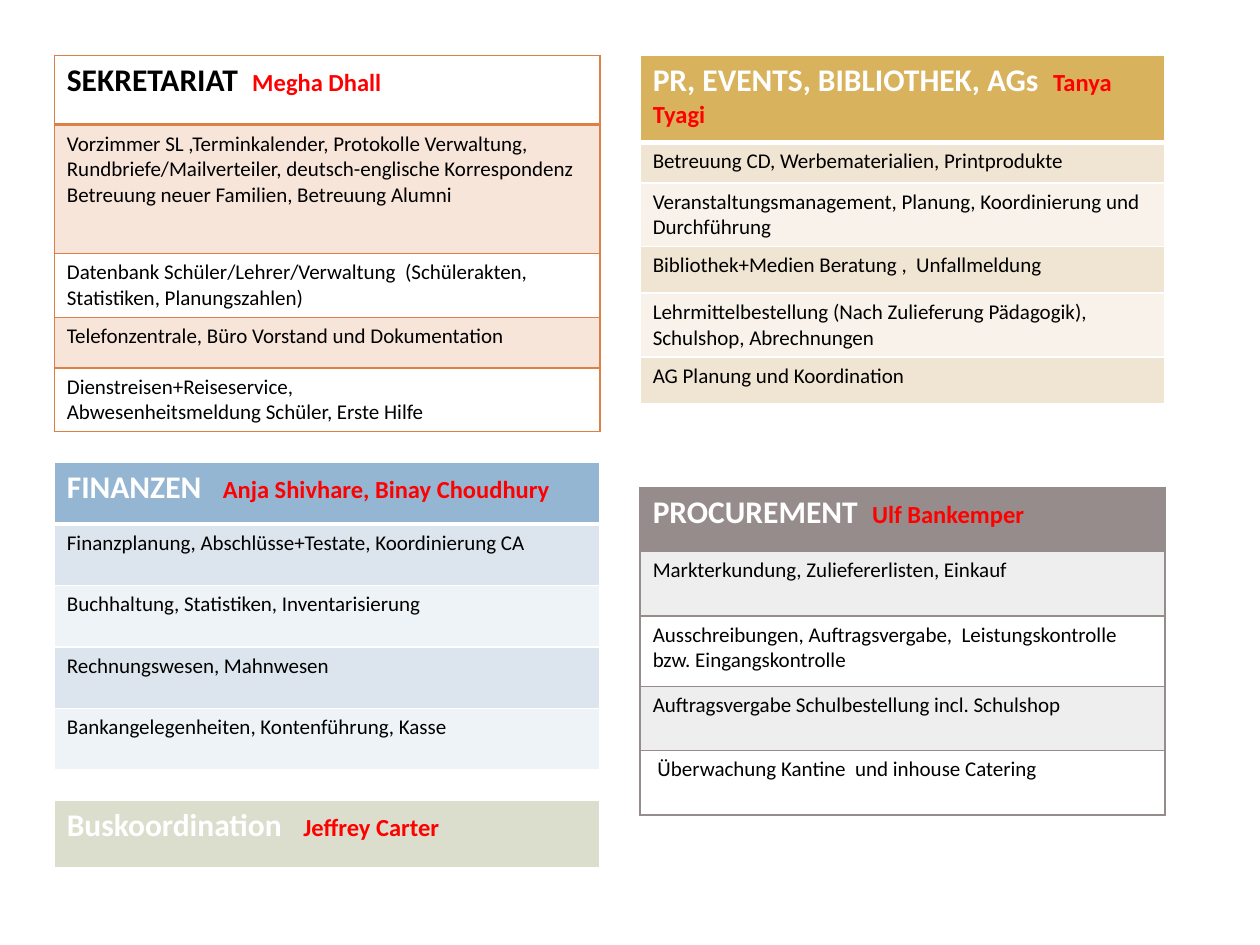
from pptx import Presentation
from pptx.dml.color import RGBColor
from pptx.oxml.ns import qn
from pptx.util import Pt
from lxml import etree

FONT = "Calibri"
WHITE = RGBColor(0xFF, 0xFF, 0xFF)
BLACK = RGBColor(0, 0, 0)
RED = RGBColor(0xFF, 0, 0)
ORANGE = RGBColor(0xDD, 0x80, 0x47)
GOLD = RGBColor(0xD8, 0xB2, 0x5C)
GOLD_BANDS = (RGBColor(0xF0, 0xE4, 0xD2), RGBColor(0xF8, 0xF2, 0xEA))
BLUE = RGBColor(0x94, 0xB6, 0xD2)
BLUE_BANDS = (RGBColor(0xDC, 0xE5, 0xEE), RGBColor(0xEE, 0xF3, 0xF7))
GREY = RGBColor(0x96, 0x8C, 0x8C)
GREY_BANDS = (RGBColor(0xEF, 0xEE, 0xEE), WHITE)
SAGE = RGBColor(0xDB, 0xDD, 0xCD)

LEFT_COL = (31, 312)    # left, width
RIGHT_COL = (365.8, 300)
TOP = 31.8


def set_borders(cell, color, top, bottom):
    """Draw the four cell borders; left and right are 1 pt."""
    tcPr = cell._tc.get_or_add_tcPr()
    for side, width in (("L", 1), ("R", 1), ("T", top), ("B", bottom)):
        ln = etree.SubElement(tcPr, qn("a:ln" + side), w=str(Pt(width)))
        fill = etree.SubElement(ln, qn("a:solidFill"))
        etree.SubElement(fill, qn("a:srgbClr"), val=str(color))


def set_fill(cell, color, alpha=None):
    """Fill a cell; a color of None leaves it open."""
    if color is None:
        cell.fill.background()
        return
    cell.fill.solid()
    cell.fill.fore_color.rgb = color
    if alpha:
        clr = cell._tc.tcPr.find(qn("a:solidFill"))[0]
        etree.SubElement(clr, qn("a:alpha"), val=str(alpha * 1000))


def add_run(p, text, size, color, bold=False):
    r = p.add_run()
    r.text = text
    r.font.name = FONT
    r.font.size = Pt(size)
    r.font.bold = bold
    r.font.color.rgb = color


def add_department(s, column, top, heights, title, person, tasks, header,
                   bands=(), line=WHITE, rule=3, title_color=WHITE, alpha=None):
    """Add one department: a header row, then one banded row per task."""
    left, width = column
    table = s.shapes.add_table(len(heights), 1, Pt(left), Pt(top),
                               Pt(width), Pt(sum(heights))).table
    table.horz_banding = False
    for row, height in zip(table.rows, heights):
        row.height = Pt(height)

    # Header with department and person in charge
    cell = table.cell(0, 0)
    set_borders(cell, line, 1, rule)
    set_fill(cell, header)
    p = cell.text_frame.paragraphs[0]
    add_run(p, title, 18, title_color, True)
    add_run(p, person, 14, RED, True)

    # Tasks
    for i, task in enumerate(tasks, 1):
        cell = table.cell(i, 0)
        set_borders(cell, line, rule if i == 1 else 1, 1)
        set_fill(cell, bands[(i - 1) % 2], alpha)
        tf = cell.text_frame
        for n, text in enumerate(task.split("\n")):
            p = tf.add_paragraph() if n else tf.paragraphs[0]
            add_run(p, text, 12, BLACK)


def main():
    prs = Presentation()
    prs.slide_width, prs.slide_height = Pt(720), Pt(540)
    s = prs.slides.add_slide(prs.slide_layouts[6])

    # Right column
    add_department(
        s, RIGHT_COL, 278.6, [36.7, 36.7, 40.3, 36.7, 36.7],
        "PROCUREMENT  ", "Ulf Bankemper",
        ["Markterkundung, Zuliefererlisten, Einkauf",
         "Ausschreibungen, Auftragsvergabe,  Leistungskontrolle bzw. Eingangskontrolle",
         "Auftragsvergabe Schulbestellung incl. Schulshop",
         " Überwachung Kantine  und inhouse Catering"],
        GREY, GREY_BANDS, line=GREY, rule=1)
    add_department(
        s, RIGHT_COL, TOP, [49.7, 23, 31.7, 26.6, 26.6, 26.6],
        "PR, EVENTS, BIBLIOTHEK, AGs  ", "Tanya Tyagi",
        ["Betreuung CD, Werbematerialien, Printprodukte",
         "Veranstaltungsmanagement, Planung, Koordinierung und Durchführung",
         "Bibliothek+Medien Beratung ,  Unfallmeldung",
         "Lehrmittelbestellung (Nach Zulieferung Pädagogik), Schulshop, Abrechnungen",
         "AG Planung und Koordination"],
        GOLD, GOLD_BANDS)

    # Left column
    add_department(
        s, LEFT_COL, TOP, [39.6, 73.5, 34.5, 28.8, 34.5],
        "SEKRETARIAT  ", "Megha Dhall",
        ["Vorzimmer SL ,Terminkalender, Protokolle Verwaltung, "
         "Rundbriefe/Mailverteiler, deutsch-englische Korrespondenz\n"
         "Betreuung neuer Familien, Betreuung Alumni",
         "Datenbank Schüler/Lehrer/Verwaltung  (Schülerakten, Statistiken, Planungszahlen)",
         "Telefonzentrale, Büro Vorstand und Dokumentation",
         "Dienstreisen+Reiseservice,\nAbwesenheitsmeldung Schüler, Erste Hilfe"],
        None, (ORANGE, None), line=ORANGE, rule=2, title_color=BLACK, alpha=20)
    add_department(
        s, LEFT_COL, 264.2, [35.2] * 5,
        "FINANZEN   ", "Anja Shivhare, Binay Choudhury",
        ["Finanzplanung, Abschlüsse+Testate, Koordinierung CA",
         "Buchhaltung, Statistiken, Inventarisierung",
         "Rechnungswesen, Mahnwesen",
         "Bankangelegenheiten, Kontenführung, Kasse"],
        BLUE, BLUE_BANDS)
    add_department(s, LEFT_COL, 457.2, [39.6],
                   "Buskoordination   ", "Jeffrey Carter", [], SAGE)

    prs.save("out.pptx")


if __name__ == "__main__":
    main()
